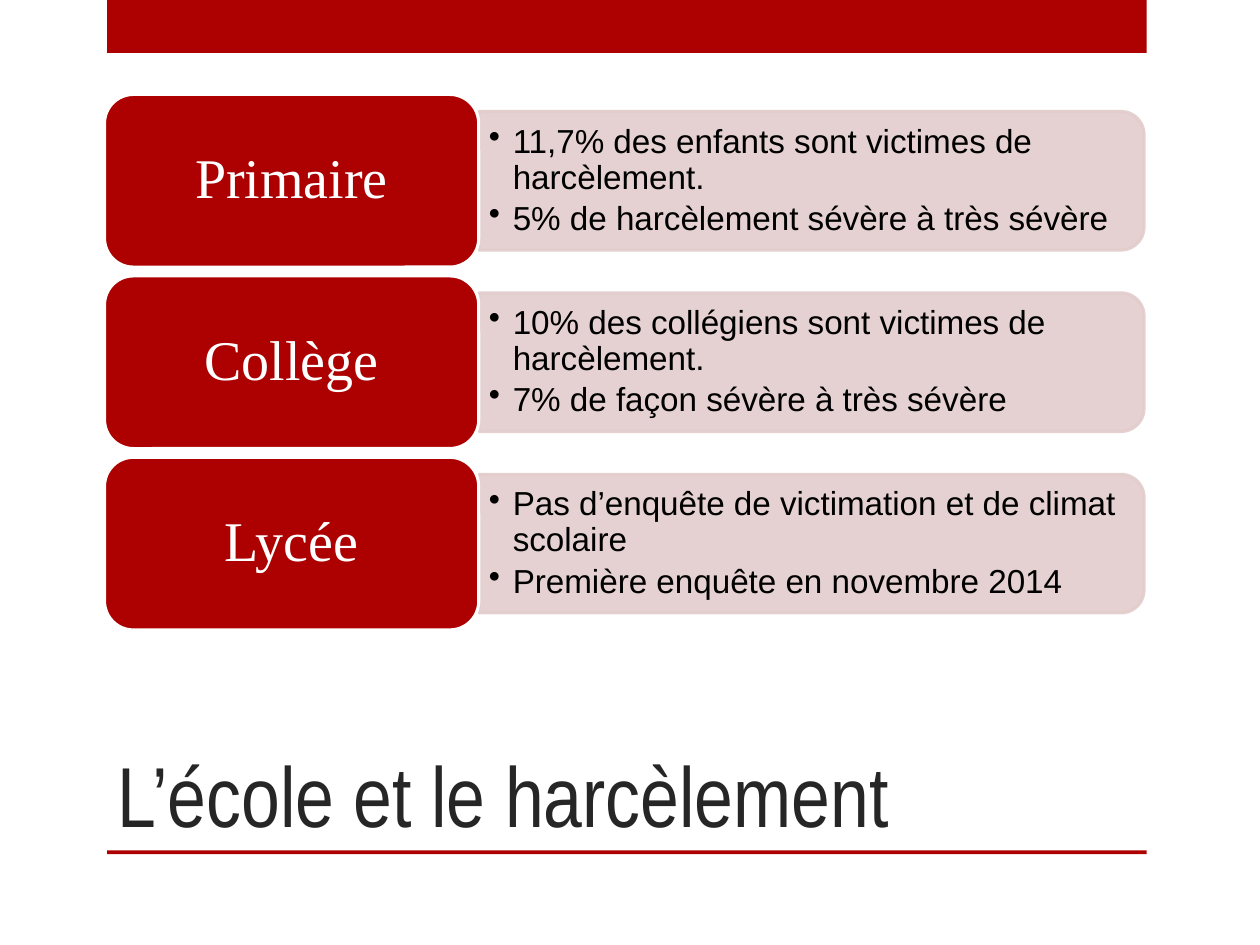
from dataclasses import dataclass

from lxml.etree import SubElement
from pptx import Presentation
from pptx.dml.color import RGBColor
from pptx.enum.shapes import MSO_SHAPE
from pptx.enum.text import MSO_ANCHOR, MSO_AUTO_SIZE, PP_ALIGN
from pptx.oxml.ns import qn
from pptx.shapes.autoshape import Shape
from pptx.slide import Slide
from pptx.text.text import TextFrame
from pptx.util import Inches, Pt

RED = RGBColor(0xAD, 0x01, 0x01)
PINK = RGBColor(0xE3, 0xCC, 0xCC)
WHITE = RGBColor(0xFF, 0xFF, 0xFF)
BLACK = RGBColor(0x00, 0x00, 0x00)
CHARCOAL = RGBColor(0x26, 0x26, 0x26)

LEFT, FIRST_TOP, ROW_STEP = 0.83, 0.75, 1.44
LABEL_WIDTH, LABEL_HEIGHT = 2.97, 1.37
PANEL_WIDTH, PANEL_HEIGHT = 5.28, 1.1
TEXT_WIDTH, TEXT_HEIGHT = 5.23, 0.99


@dataclass
class SchoolLevel:
    name: str
    facts: list[str]


LEVELS = [
    SchoolLevel("Primaire", ["11,7% des enfants sont victimes de harcèlement.",
                             "5% de harcèlement sévère à très sévère"]),
    SchoolLevel("Collège", ["10% des collégiens sont victimes de harcèlement.",
                            "7% de façon sévère à très sévère"]),
    SchoolLevel("Lycée", ["Pas d’enquête de victimation et de climat scolaire",
                          "Première enquête en novembre 2014"]),
]


def apply_format(target: object, values: dict) -> None:
    for name, value in values.items():
        setattr(target, name, value)


def set_frame(frame: TextFrame, anchor: MSO_ANCHOR, side: float, edge: float) -> None:
    apply_format(frame, {
        "word_wrap": True, "auto_size": MSO_AUTO_SIZE.NONE, "vertical_anchor": anchor,
        "margin_left": Inches(side), "margin_right": Inches(side),
        "margin_top": Inches(edge), "margin_bottom": Inches(edge)})


def write(paragraph, text: str, font: str, size: float, color: RGBColor, **layout) -> None:
    run = paragraph.add_run()
    run.text = text
    apply_format(run.font, {"name": font, "size": Pt(size)})
    run.font.color.rgb = color
    apply_format(paragraph, layout)


def add_block(slide: Slide, kind: MSO_SHAPE, left: float, top: float, width: float,
              height: float, fill: RGBColor, line: RGBColor | None = None) -> Shape:
    shape = slide.shapes.add_shape(kind, Inches(left), Inches(top),
                                   Inches(width), Inches(height))
    shape.shadow.inherit = False
    shape.fill.solid()
    shape.fill.fore_color.rgb = fill
    if line is None:
        shape.line.fill.background()
    else:
        shape.line.color.rgb = line
        shape.line.width = Pt(1.75)
    return shape


def add_bullet(paragraph) -> None:
    properties = paragraph._p.get_or_add_pPr()
    properties.set("marL", str(Inches(0.19)))
    properties.set("indent", str(-Inches(0.19)))
    SubElement(properties, qn("a:buChar"), char="•")


def add_level(slide: Slide, level: SchoolLevel, top: float) -> None:
    middle = top + LABEL_HEIGHT / 2
    panel_left = LEFT + LABEL_WIDTH

    # Panel: a tall shape turned so that its rounded end faces right
    center = panel_left + PANEL_WIDTH / 2
    panel = add_block(slide, MSO_SHAPE.ROUND_2_SAME_RECTANGLE,
                      center - PANEL_HEIGHT / 2, middle - PANEL_WIDTH / 2,
                      PANEL_HEIGHT, PANEL_WIDTH, PINK, PINK)
    panel.rotation = 90
    for color in panel._element.spPr.iter(qn("a:srgbClr")):
        SubElement(color, qn("a:alpha"), val="90000")

    # Facts, upright over the panel
    box = slide.shapes.add_textbox(Inches(panel_left), Inches(middle - TEXT_HEIGHT / 2),
                                   Inches(TEXT_WIDTH), Inches(TEXT_HEIGHT))
    frame = box.text_frame
    set_frame(frame, MSO_ANCHOR.MIDDLE, 0.08, 0.04)
    for index, fact in enumerate(level.facts):
        paragraph = frame.add_paragraph() if index else frame.paragraphs[0]
        write(paragraph, fact, "Arial", 19, BLACK, line_spacing=0.9, space_after=Pt(3))
        add_bullet(paragraph)

    # Label
    label = add_block(slide, MSO_SHAPE.ROUNDED_RECTANGLE, LEFT, top,
                      LABEL_WIDTH, LABEL_HEIGHT, RED, WHITE)
    set_frame(label.text_frame, MSO_ANCHOR.MIDDLE, 0.2, 0.14)
    write(label.text_frame.paragraphs[0], level.name, "Times New Roman", 32, WHITE,
          alignment=PP_ALIGN.CENTER, line_spacing=0.9)


def main() -> None:
    presentation = Presentation()
    apply_format(presentation, {"slide_width": Inches(10), "slide_height": Inches(7.5)})
    slide = presentation.slides.add_slide(presentation.slide_layouts[5])

    # Top band and rule under the title
    for top, height in ((0, 0.42), (6.75, 0.03)):
        add_block(slide, MSO_SHAPE.RECTANGLE, 0.85, top, 8.25, height, RED)

    # Title
    title = slide.shapes.title
    apply_format(title, {"left": Inches(LEFT), "top": Inches(5),
                         "width": Inches(7.42), "height": Inches(1.75)})
    set_frame(title.text_frame, MSO_ANCHOR.BOTTOM, 0.1, 0.05)
    write(title.text_frame.paragraphs[0], "L’école et le harcèlement", "Arial Narrow",
          48.6, CHARCOAL, alignment=PP_ALIGN.LEFT)

    # School levels
    for row, level in enumerate(LEVELS):
        add_level(slide, level, FIRST_TOP + row * ROW_STEP)

    presentation.save("out.pptx")


if __name__ == "__main__":
    main()
